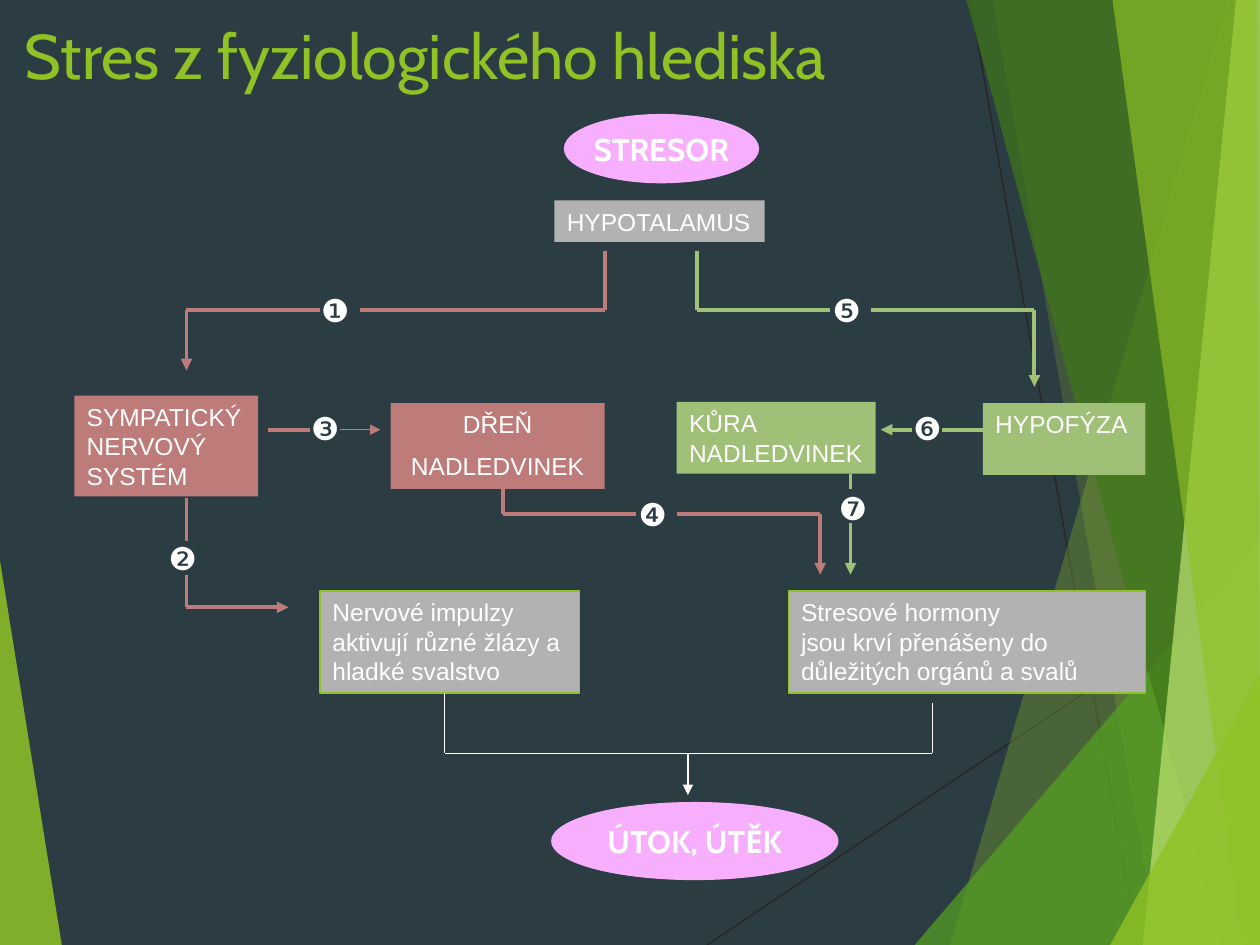
from dataclasses import dataclass
from itertools import pairwise

from lxml.etree import SubElement
from pptx import Presentation
from pptx.dml.color import RGBColor
from pptx.enum.shapes import MSO_CONNECTOR, MSO_SHAPE
from pptx.enum.text import MSO_ANCHOR, PP_ALIGN
from pptx.oxml.ns import qn
from pptx.util import Inches, Pt


@dataclass(frozen=True)
class Theme:
    background: str = "2C3C43"
    accent: str = "90C226"
    leaf: str = "54A021"
    forest: str = "3F7819"
    lime: str = "C0E474"
    dark_line: str = "262626"
    white: str = "FFFFFF"
    gray: str = "B2B2B2"
    red: str = "BD7B79"
    green: str = "A0BF77"
    pink: str = "F7AFFD"
    body_font: str = "Arial"
    heading_font: str = "Cabin"
    title_size: int = 36
    large_size: int = 18
    body_size: int = 14
    thin: float = 0.75
    thick: float = 2.25


THEME = Theme()

RAYS = [((5.61, 7.5), (10, 4.57)), ((7.7, 0), (9.03, 7.5))]

# colour, opacity in percent, corners
FACETS = [
    (THEME.accent, 85, [(0, 4.45), (0.49, 7.5), (0, 7.5)]),
    (THEME.accent, 30, [(9.75, 0), (7.54, 7.5), (10, 7.5), (10, 0)]),
    (THEME.accent, 20, [(7.88, 0), (9.19, 7.5), (10, 7.5), (10, 0)]),
    (THEME.leaf, 72, [(7.26, 7.5), (10, 4.29), (10, 7.5)]),
    (THEME.forest, 70, [(7.67, 0), (9.7, 7.5), (10, 7.5), (10, 0)]),
    (THEME.lime, 70, [(9.81, 0), (9.07, 7.5), (10, 7.5), (10, 0)]),
    (THEME.accent, 65, [(8.83, 0), (9.86, 7.5), (10, 7.5), (9.98, 0)]),
    (THEME.accent, 80, [(8.81, 7.5), (10, 5.35), (10, 7.5)]),
]

# lines of text, (left, top, width, height), fill, outline
BOXES = [
    (["HYPOTALAMUS"], (4.4, 1.59, 1.67, 0.33), THEME.gray, None),
    (["SYMPATICKÝ", "NERVOVÝ", "SYSTÉM"], (0.59, 3.14, 1.46, 0.8), THEME.red, None),
    (["KŮRA", "NADLEDVINEK"], (5.37, 3.19, 1.58, 0.57), THEME.green, None),
    (["HYPOFÝZA"], (7.8, 3.2, 1.29, 0.57), THEME.green, None),
    (["Nervové impulzy", "aktivují různé žlázy a", "hladké svalstvo"],
     (2.54, 4.69, 2.06, 0.81), THEME.gray, THEME.accent),
    (["Stresové hormony", "jsou krví přenášeny do", "důležitých orgánů a svalů"],
     (6.26, 4.69, 2.83, 0.81), THEME.gray, THEME.accent),
]

ELLIPSES = [
    ("STRESOR", (4.48, 0.91, 1.54, 0.54)),
    ("ÚTOK, ÚTĚK", (4.38, 6.37, 2.27, 0.61)),
]

# symbol, left, top
BADGES = [
    ("❶", 2.45, 2.26), ("❷", 1.24, 4.23), ("❸", 2.37, 3.2), ("❹", 4.97, 3.88),
    ("❺", 6.51, 2.26), ("❻", 7.15, 3.2), ("❼", 6.56, 3.83),
]

# colour, width, arrow at the end, corners
ROUTES = [
    (THEME.red, THEME.thick, False, [(4.8, 1.99), (4.8, 2.46), (2.86, 2.46)]),
    (THEME.red, THEME.thick, True, [(2.54, 2.46), (1.48, 2.46), (1.48, 2.94)]),
    (THEME.red, THEME.thick, False, [(1.48, 3.95), (1.48, 4.29)]),
    (THEME.red, THEME.thick, True, [(1.48, 4.56), (1.48, 4.82), (2.29, 4.82)]),
    (THEME.red, THEME.thick, False, [(2.13, 3.41), (2.46, 3.41)]),
    (THEME.red, THEME.thin, True, [(2.7, 3.41), (3.02, 3.41)]),
    (THEME.red, THEME.thick, False, [(3.99, 3.88), (3.99, 4.08), (5.05, 4.08)]),
    (THEME.red, THEME.thick, True, [(5.37, 4.08), (6.51, 4.08), (6.51, 4.56)]),
    (THEME.green, THEME.thick, False, [(5.53, 1.99), (5.53, 2.46), (6.59, 2.46)]),
    (THEME.green, THEME.thick, True, [(6.91, 2.46), (8.21, 2.46), (8.21, 3.07)]),
    (THEME.green, THEME.thick, False, [(7.8, 3.41), (7.48, 3.41)]),
    (THEME.green, THEME.thick, True, [(7.24, 3.41), (6.99, 3.41)]),
    (THEME.green, THEME.thick, False, [(6.75, 3.76), (6.75, 3.88)]),
    (THEME.green, THEME.thick, True, [(6.75, 4.15), (6.75, 4.56)]),
    (THEME.white, THEME.thin, False,
     [(3.53, 5.5), (3.53, 5.98), (7.4, 5.98), (7.4, 5.58)]),
    (THEME.white, THEME.thin, True, [(5.46, 5.98), (5.46, 6.31)]),
]


def apply_format(target, values):
    for name, value in values.items():
        setattr(target, name, value)


def paint(shape, fill, outline=None):
    shape.shadow.inherit = False
    shape.fill.solid()
    shape.fill.fore_color.rgb = RGBColor.from_string(fill)
    if outline:
        shape.line.color.rgb = RGBColor.from_string(outline)
        shape.line.width = Pt(THEME.thin)
    else:
        shape.line.fill.background()


def write_text(shape, lines, size, font=THEME.body_font, color=THEME.white, bold=False,
               alignment=PP_ALIGN.LEFT, anchor=MSO_ANCHOR.TOP, wrap=False, gap=0):
    """Fill a shape with one paragraph a line, gap points apart."""
    frame = shape.text_frame
    apply_format(frame, {"word_wrap": wrap, "vertical_anchor": anchor})
    for index, line in enumerate(lines):
        paragraph = frame.add_paragraph() if index else frame.paragraphs[0]
        paragraph.text = line
        paragraph.alignment = alignment
        if index and gap:
            paragraph.space_before = Pt(gap)
        apply_format(paragraph.font, {"name": font, "size": Pt(size), "bold": bold})
        paragraph.font.color.rgb = RGBColor.from_string(color)


def add_preset(slide, kind, place, fill, outline=None):
    shape = slide.shapes.add_shape(kind, *map(Inches, place))
    paint(shape, fill, outline)
    return shape


def add_text(slide, place, text, size, **style):
    box = slide.shapes.add_textbox(*map(Inches, place))
    write_text(box, [text], size, **style)


def add_facet(slide, color, opacity, corners):
    points = [(Inches(x), Inches(y)) for x, y in corners]
    builder = slide.shapes.build_freeform(*points[0])
    builder.add_line_segments(points[1:], close=True)
    shape = builder.convert_to_shape()
    paint(shape, color)
    color_element = shape.fill._xPr.find(qn("a:solidFill"))[0]
    SubElement(color_element, qn("a:alpha"), val=str(opacity * 1000))


def add_route(slide, color, width, arrow, corners):
    """Join the corners with straight connectors; an arrow ends the last one."""
    for start, end in pairwise(corners):
        connector = slide.shapes.add_connector(
            MSO_CONNECTOR.STRAIGHT, *map(Inches, start + end))
        connector.line.color.rgb = RGBColor.from_string(color)
        connector.line.width = Pt(width)
        properties = connector._element.spPr
        if arrow and end == corners[-1]:
            SubElement(properties.find(qn("a:ln")), qn("a:tailEnd"), type="triangle")
        SubElement(properties, qn("a:effectLst"))


def main():
    presentation = Presentation()
    apply_format(presentation, {"slide_width": Inches(10), "slide_height": Inches(7.5)})
    slide = presentation.slides.add_slide(presentation.slide_layouts[6])
    slide.background.fill.solid()
    slide.background.fill.fore_color.rgb = RGBColor.from_string(THEME.background)

    for ray in RAYS:
        add_route(slide, THEME.dark_line, THEME.thin, False, ray)
    for facet in FACETS:
        add_facet(slide, *facet)

    add_text(slide, (0.1, 0.08, 6.94, 1.44), "Stres z fyziologického hlediska",
             THEME.title_size, font=THEME.heading_font, color=THEME.accent, wrap=True)

    for lines, place, fill, outline in BOXES:
        box = add_preset(slide, MSO_SHAPE.RECTANGLE, place, fill, outline)
        write_text(box, lines, THEME.body_size, wrap=place[2] in (1.29, 2.83))
    medulla = add_preset(slide, MSO_SHAPE.RECTANGLE, (3.1, 3.2, 1.7, 0.68), THEME.red)
    write_text(medulla, ["DŘEŇ", "NADLEDVINEK"], THEME.body_size,
               alignment=PP_ALIGN.CENTER, wrap=True, gap=7)
    for text, place in ELLIPSES:
        ellipse = add_preset(slide, MSO_SHAPE.OVAL, place, THEME.pink, THEME.pink)
        write_text(ellipse, [text], THEME.large_size, font=THEME.heading_font, bold=True,
                   alignment=PP_ALIGN.CENTER, anchor=MSO_ANCHOR.MIDDLE)
    for route in ROUTES:
        add_route(slide, *route)
    for symbol, left, top in BADGES:
        add_text(slide, (left, top, 0.42, 0.4), symbol, THEME.large_size)

    presentation.save("out.pptx")


if __name__ == "__main__":
    main()
